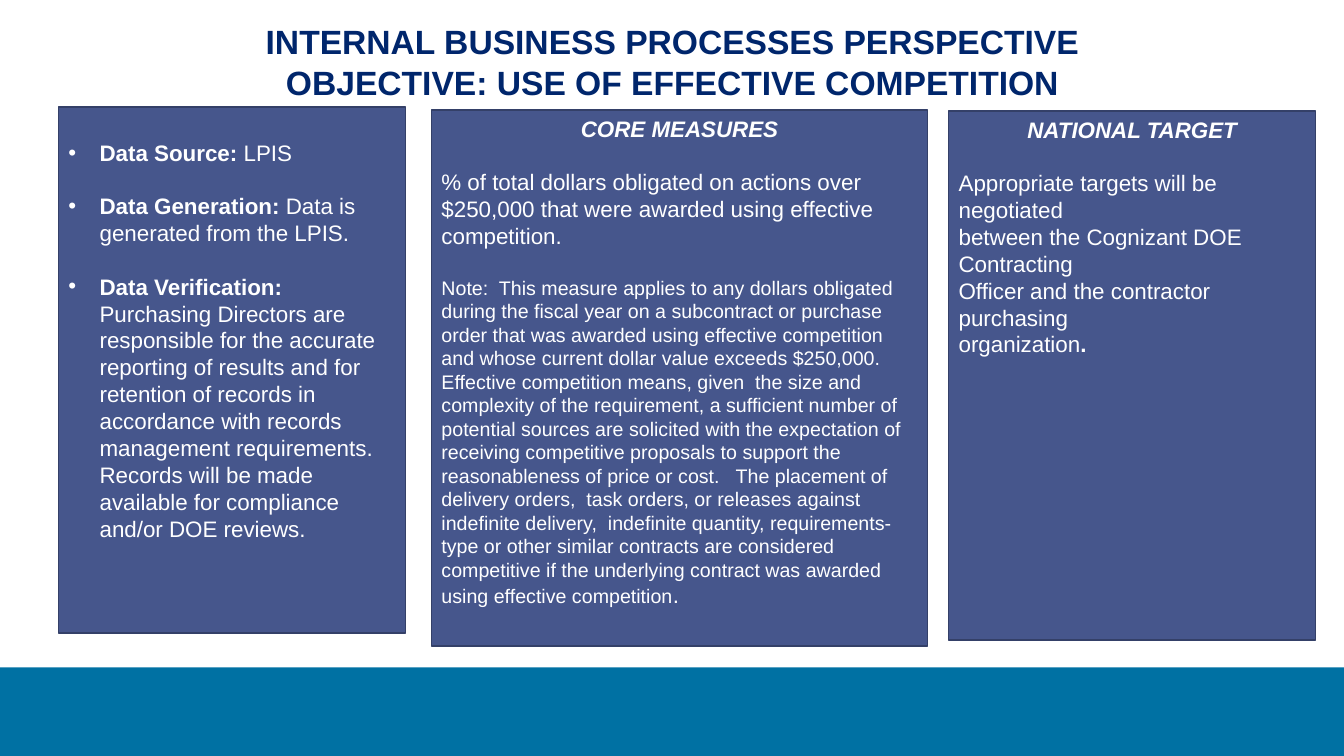
from dataclasses import dataclass

from lxml import etree
from pptx import Presentation
from pptx import util as u
from pptx.dml.color import RGBColor
from pptx.enum import shapes, text
from pptx.oxml.ns import qn

NAVY = RGBColor(0x00, 0x26, 0x6C)
BAND_BLUE = RGBColor(0x00, 0x71, 0xA3)
PANEL_BLUE = RGBColor(0x46, 0x56, 0x8C)
PANEL_EDGE = RGBColor(0x34, 0x40, 0x68)
WHITE = RGBColor(0xFF, 0xFF, 0xFF)
FONT = "Arial"
LINE_GAP = 19  # points, one line of body text


@dataclass
class Run:
    text: str
    size: float = 16
    bold: bool = False
    italic: bool = False
    color: RGBColor = WHITE


@dataclass
class Para:
    runs: list[Run]
    centered: bool = False
    bullet: bool = False
    gap: float = 0


@dataclass
class Panel:
    left: float
    top: float
    width: float
    height: float
    paragraphs: list[Para]
    margin_top: float = 0.05


def plain(words: str, gap: float = 0) -> Para:
    return Para([Run(words)], gap=gap)


def heading(words: str) -> Para:
    return Para([Run(words, bold=True, italic=True)], centered=True)


def fact(label: str, words: str, gap: float = LINE_GAP) -> Para:
    return Para([Run(label, bold=True), Run(words)], bullet=True, gap=gap)


def title_line(words: str) -> Para:
    return Para([Run(words, size=24, bold=True, color=NAVY)], centered=True)


TITLE = [
    title_line("INTERNAL BUSINESS PROCESSES PERSPECTIVE"),
    title_line("OBJECTIVE: USE OF EFFECTIVE COMPETITION"),
]

NOTE = (
    "Note:  This measure applies to any dollars obligated during the fiscal year on a "
    "subcontract or purchase order that was awarded using effective competition and whose "
    "current dollar value exceeds $250,000. Effective competition means, given  the size and "
    "complexity of the requirement, a sufficient number of potential sources are solicited "
    "with the expectation of receiving competitive proposals to support the reasonableness of "
    "price or cost.   The placement of delivery orders,  task orders, or releases against "
    "indefinite delivery,  indefinite quantity, requirements-type or other similar contracts "
    "are considered competitive if the underlying contract was awarded using effective "
    "competition"
)

PANELS = [
    Panel(0.58, 1.06, 3.44, 5.22, [
        fact("Data Source: ", "LPIS", gap=0),
        fact("Data Generation: ", "Data is generated from the LPIS."),
        fact("Data Verification: ",
             "Purchasing Directors are responsible for the accurate reporting of results and "
             "for retention of records in accordance with records management requirements. "
             "Records will be made available for compliance and/or DOE reviews."),
    ], margin_top=0.32),
    Panel(4.28, 1.09, 4.92, 5.32, [
        heading("CORE MEASURES"),
        plain("% of total dollars obligated on actions over $250,000 that were awarded using "
              "effective", gap=LINE_GAP),
        plain("competition."),
        Para([Run(NOTE, size=14), Run(".")], gap=LINE_GAP),
    ]),
    Panel(9.41, 1.1, 3.64, 5.25, [
        heading("NATIONAL TARGET"),
        plain("Appropriate targets will be negotiated", gap=LINE_GAP),
        plain("between the Cognizant DOE Contracting"),
        plain("Officer and the contractor purchasing"),
        Para([Run("organization"), Run(".", bold=True)]),
    ]),
]


def add_run(paragraph, words: str, *, size: float, bold: bool, italic: bool,
            color: RGBColor) -> None:
    run = paragraph.add_run()
    run.text = words
    font = run.font
    font.name, font.size = FONT, u.Pt(size)
    font.bold, font.italic = bold, italic
    font.color.rgb = color


def add_bullet(paragraph) -> None:
    properties = paragraph._p.get_or_add_pPr()
    indent = u.Inches(0.31)
    properties.set("marL", str(indent))
    properties.set("indent", str(-indent))
    bullet_font = etree.SubElement(properties, qn("a:buFont"))
    bullet_font.set("typeface", FONT)
    etree.SubElement(properties, qn("a:buChar")).set("char", "•")


def write_text(frame, paragraphs: list[Para], *, margin_top: float = 0.05) -> None:
    frame.word_wrap = True
    frame.auto_size = text.MSO_AUTO_SIZE.NONE
    frame.vertical_anchor = text.MSO_ANCHOR.TOP
    frame.margin_left = frame.margin_right = u.Inches(0.1)
    frame.margin_top, frame.margin_bottom = u.Inches(margin_top), u.Inches(0.05)
    for index, para in enumerate(paragraphs):
        paragraph = frame.add_paragraph() if index else frame.paragraphs[0]
        if para.bullet:
            add_bullet(paragraph)
        paragraph.alignment = text.PP_ALIGN.CENTER if para.centered else text.PP_ALIGN.LEFT
        if para.gap:
            paragraph.space_before = u.Pt(para.gap)
        for run in para.runs:
            add_run(paragraph, run.text, size=run.size, bold=run.bold,
                    italic=run.italic, color=run.color)


def add_rectangle(slide, left: float, top: float, width: float, height: float,
                  fill: RGBColor, edge: RGBColor | None = None):
    shape = slide.shapes.add_shape(
        shapes.MSO_SHAPE.RECTANGLE,
        u.Inches(left), u.Inches(top), u.Inches(width), u.Inches(height))
    shape.shadow.inherit = False
    shape.fill.solid()
    shape.fill.fore_color.rgb = fill
    if edge is None:
        shape.line.fill.background()
    else:
        shape.line.color.rgb = edge
        shape.line.width = u.Pt(1)
    return shape


def main() -> None:
    presentation = Presentation()
    presentation.slide_width, presentation.slide_height = u.Inches(13.33), u.Inches(7.5)
    slide = presentation.slides.add_slide(presentation.slide_layouts[5])

    title = slide.shapes.title
    title.left, title.top = u.Inches(2.3), u.Inches(0.16)
    title.width, title.height = u.Inches(8.74), u.Inches(0.91)
    write_text(title.text_frame, TITLE)

    add_rectangle(slide, 0, 6.62, 13.33, 0.88, BAND_BLUE)
    for panel in PANELS:
        shape = add_rectangle(slide, panel.left, panel.top, panel.width, panel.height,
                              PANEL_BLUE, PANEL_EDGE)
        write_text(shape.text_frame, panel.paragraphs, margin_top=panel.margin_top)

    presentation.save("out.pptx")


if __name__ == "__main__":
    main()
